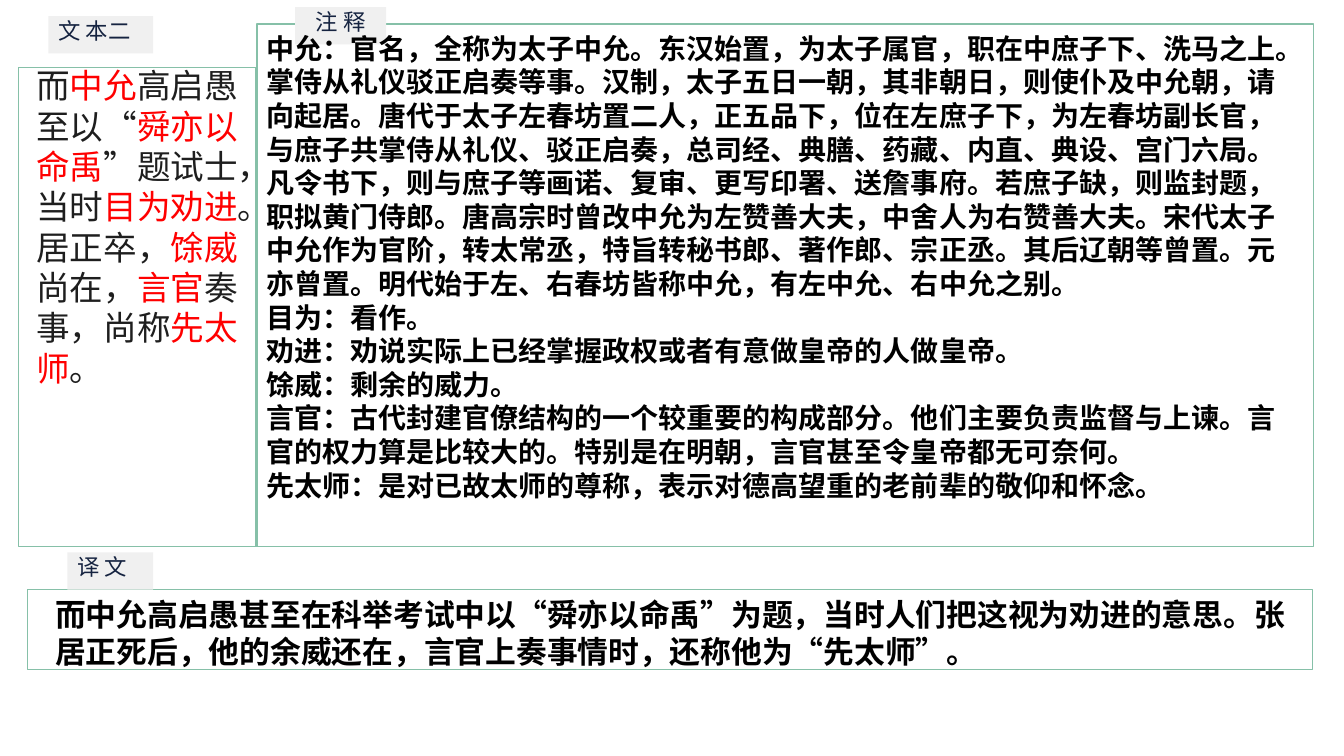
from pptx import Presentation
from pptx.dml.color import RGBColor
from pptx.enum.shapes import MSO_SHAPE as SHAPE
from pptx.enum.text import MSO_ANCHOR as ANCHOR, MSO_AUTO_SIZE as AUTO, PP_ALIGN as ALIGN
from pptx.oxml.ns import qn
from pptx.util import Cm, Pt
from lxml import etree

FONT = "Noto Sans CJK SC"
GREEN = RGBColor(0x86, 0xC0, 0xA8)
GREY = RGBColor(0xF0, 0xF0, 0xF0)
NAVY = RGBColor(0x15, 0x23, 0x40)
INK = RGBColor(0x1E, 0x1E, 0x1E)
RED = RGBColor(0xFF, 0x00, 0x00)
BLACK = RGBColor(0x00, 0x00, 0x00)

SOURCE = ["而|中允|高启愚至以“|舜亦以命禹|”题试士，当时|目为劝进|。居正卒，|馀威|尚在，|言官|奏事，尚称|先太师|。"]
GLOSSARY = [
    "中允：官名，全称为太子中允。东汉始置，为太子属官，职在中庶子下、洗马之上。"
    "掌侍从礼仪驳正启奏等事。汉制，太子五日一朝，其非朝日，则使仆及中允朝，请"
    "向起居。唐代于太子左春坊置二人，正五品下，位在左庶子下，为左春坊副长官，"
    "与庶子共掌侍从礼仪、驳正启奏，总司经、典膳、药藏、内直、典设、宫门六局。"
    "凡令书下，则与庶子等画诺、复审、更写印署、送詹事府。若庶子缺，则监封题，"
    "职拟黄门侍郎。唐高宗时曾改中允为左赞善大夫，中舍人为右赞善大夫。宋代太子"
    "中允作为官阶，转太常丞，特旨转秘书郎、著作郎、宗正丞。其后辽朝等曾置。元"
    "亦曾置。明代始于左、右春坊皆称中允，有左中允、右中允之别。",
    "目为：看作。",
    "劝进：劝说实际上已经掌握政权或者有意做皇帝的人做皇帝。",
    "馀威：剩余的威力。",
    "言官：古代封建官僚结构的一个较重要的构成部分。他们主要负责监督与上谏。"
    "言官的权力算是比较大的。特别是在明朝，言官甚至令皇帝都无可奈何。",
    "先太师：是对已故太师的尊称，表示对德高望重的老前辈的敬仰和怀念。",
]
TRANSLATION = ["而中允高启愚甚至在科举考试中以“舜亦以命禹”为题，当时人们把这视为劝进的意思。"
               "张居正死后，他的余威还在，言官上奏事情时，还称他为“先太师”。"]


class Page:
    label_style = {"size": Pt(16), "bold": False}
    source_style = {"size": Pt(24), "bold": False}
    glossary_style = {"size": Pt(20), "bold": True}
    translation_style = {"size": Pt(22), "bold": True}

    def __init__(self, prs):
        self.s = prs.slides.add_slide(prs.slide_layouts[3])
        self.title = self.s.shapes.title
        self.left_body = self.s.placeholders[1]
        self.right_body = self.s.placeholders[2]

    def box(self, area, fill=None, line=None):
        sp = self.s.shapes.add_shape(SHAPE.RECTANGLE, *map(Cm, area))
        sp.shadow.inherit = False
        if fill is None:
            sp.fill.background()
        else:
            sp.fill.solid()
            sp.fill.fore_color.rgb = fill
        if line is None:
            sp.line.fill.background()
        else:
            sp.line.color.rgb = line
            sp.line.width = Pt(1)

    def run(self, p, text, style, color):
        r = p.add_run()
        r.text = text
        for name, value in style.items():
            setattr(r.font, name, value)
        r.font.name = FONT
        r.font.color.rgb = color
        rpr = r._r.get_or_add_rPr()
        rpr.set("lang", "zh-CN")
        etree.SubElement(rpr, qn("a:ea")).set("typeface", FONT)

    def text(self, area, paragraphs, style, color, holder=None, align=ALIGN.LEFT, spacing=None):
        sp = holder or self.s.shapes.add_textbox(*map(Cm, area))
        self.s.shapes._spTree.append(sp._element)
        for name, value in zip(("left", "top", "width", "height"), area):
            setattr(sp, name, Cm(value))
        tf = sp.text_frame
        frame = {"word_wrap": True, "auto_size": AUTO.NONE, "vertical_anchor": ANCHOR.TOP}
        for name, value in frame.items():
            setattr(tf, name, value)
        layout = {"alignment": align, "space_before": Pt(0), "space_after": Pt(0),
                  "line_spacing": spacing or Pt(style["size"].pt * 1.2)}
        for i, line in enumerate(paragraphs):
            p = tf.add_paragraph() if i else tf.paragraphs[0]
            for name, value in layout.items():
                setattr(p, name, value)
            ppr = p._p.get_or_add_pPr()
            ppr.set("marL", "0")
            ppr.set("indent", "0")
            etree.SubElement(ppr, qn("a:buNone"))
            for j, part in enumerate(line.split("|")):
                self.run(p, part, style, RED if j % 2 else color)

    def label(self, x, y, width, caption, holder=None, align=ALIGN.LEFT):
        self.box((x, y, width, 0.94), fill=GREY)
        self.text((x, y - 0.1, width, 1.19), [caption], self.label_style, NAVY,
                  holder, align, Pt(19))


def main():
    prs = Presentation()
    prs.slide_width, prs.slide_height = Cm(33.87), Cm(19.05)
    page = Page(prs)
    page.box((0.46, 1.7, 5.99, 12.07), line=GREEN)
    page.label(1.22, 0.41, 2.64, "文 本二", page.title)
    page.box((6.48, 0.61, 26.62, 13.16), line=GREEN)
    page.label(7.44, 0.18, 2.29, "注 释", align=ALIGN.CENTER)
    page.box((0.69, 14.86, 32.39, 2.01), line=GREEN)
    page.label(1.7, 13.92, 2.16, "译 文")
    page.text((0.66, 1.52, 5.79, 9.22), SOURCE, page.source_style, INK, page.left_body)
    page.text((6.45, 0.66, 26.37, 17.42), GLOSSARY, page.glossary_style, BLACK, page.right_body)
    page.text((1.14, 14.88, 32.16, 4.04), TRANSLATION, page.translation_style, BLACK)
    prs.save("out.pptx")


if __name__ == "__main__":
    main()
